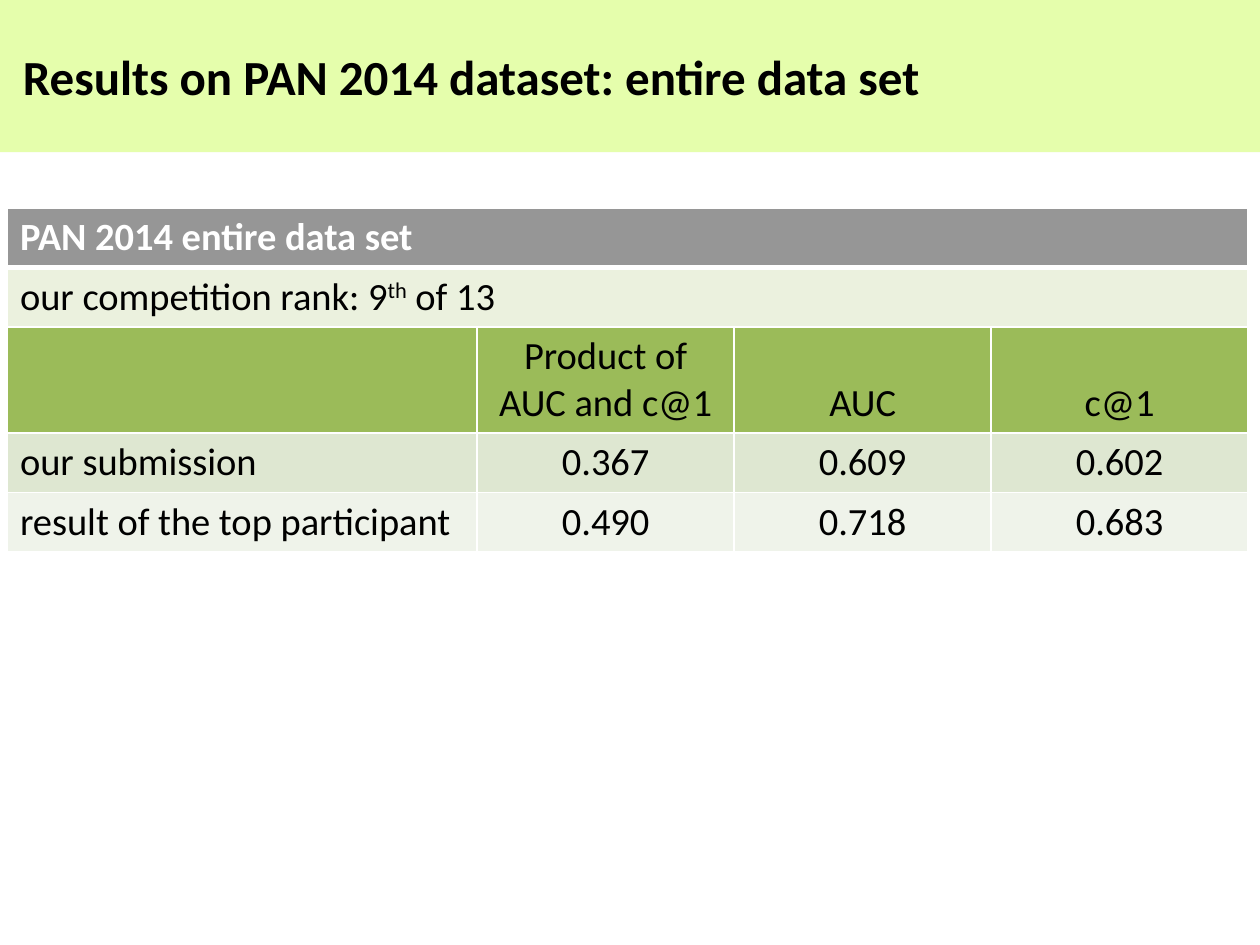
from lxml import etree
from pptx import Presentation
from pptx import util as u
from pptx.dml import color
from pptx.enum import shapes, text
from pptx.oxml import ns

THEME = {
    "font": "Calibri",
    "title_size": 28,
    "table_size": 22,
    "text": "000000",
    "white": "FFFFFF",
    "band": "E5FEAC",
    "rows": ["969696", "EBF1DE", "9BBB59", "DEE7D1", "EFF3EA"],
}
ROWS = [
    ["PAN 2014 entire data set"],
    ["our competition rank: 9^th^ of 13"],
    ["", "Product of\nAUC and c@1", "AUC", "c@1"],
    ["our submission", "0.367", "0.609", "0.602"],
    ["result of the top participant", "0.490", "0.718", "0.683"],
]
COL_WIDTHS = [9.47, 5.18, 5.18, 5.18]
ROW_HEIGHTS = [1.18, 1.18, 2.12, 1.18, 1.18]


def format_run(r, size, rgb, bold):
    values = {"name": THEME["font"], "size": u.Pt(size), "bold": bold}
    for name, value in values.items():
        setattr(r.font, name, value)
    r.font.color.rgb = color.RGBColor.from_string(rgb)


def add_borders(cell, widths):
    tc_pr = cell._tc.get_or_add_tcPr()
    for i, (side, width) in enumerate(widths.items()):
        ln = etree.Element(ns.qn(f"a:ln{side}"), w=str(u.Pt(width)))
        fill = etree.SubElement(ln, ns.qn("a:solidFill"))
        etree.SubElement(fill, ns.qn("a:srgbClr"), val=THEME["white"])
        tc_pr.insert(i, ln)


prs = Presentation()
prs.slide_width, prs.slide_height = u.Cm(25.4), u.Cm(19.05)
s = prs.slides.add_slide(prs.slide_layouts[5])

frame = s.shapes.add_table(
    len(ROWS), len(COL_WIDTHS), u.Cm(0.15), u.Cm(4.19),
    u.Cm(sum(COL_WIDTHS)), u.Cm(sum(ROW_HEIGHTS)))
table = frame.table
table.horz_banding = False
for col, width in zip(table.columns, COL_WIDTHS):
    col.width = u.Cm(width)
for row, height in zip(table.rows, ROW_HEIGHTS):
    row.height = u.Cm(height)

for i, values in enumerate(ROWS):
    heading = i == 0
    for j in range(len(COL_WIDTHS)):
        cell = table.cell(i, j)
        cell.fill.solid()
        cell.fill.fore_color.rgb = color.RGBColor.from_string(THEME["rows"][i])
        add_borders(cell, {"L": 1, "R": 1, "T": 3 if i == 1 else 1, "B": 3 if heading else 1})
    if len(values) == 1:
        table.cell(i, 0).merge(table.cell(i, len(COL_WIDTHS) - 1))
    for j, value in enumerate(values):
        cell = table.cell(i, j)
        cell.vertical_anchor = text.MSO_ANCHOR.BOTTOM if i == 2 else text.MSO_ANCHOR.TOP
        tf = cell.text_frame
        for k, line in enumerate(value.split("\n")):
            p = tf.add_paragraph() if k else tf.paragraphs[0]
            p.alignment = text.PP_ALIGN.CENTER if j else text.PP_ALIGN.LEFT
            p.font.size = u.Pt(THEME["table_size"])
            for n, part in enumerate(line.split("^") if line else []):
                r = p.add_run()
                r.text = part
                format_run(r, THEME["table_size"], THEME["white" if heading else "text"], heading)
                if n % 2:
                    r._r.get_or_add_rPr().set("baseline", "30000")

band = s.shapes.add_shape(shapes.MSO_SHAPE.RECTANGLE, 0, 0, prs.slide_width, u.Cm(3.07))
band.shadow.inherit = False
band.fill.solid()
band.fill.fore_color.rgb = color.RGBColor.from_string(THEME["band"])
band.line.fill.background()

title = s.shapes.title
title.element.getparent().append(title.element)
box = {"left": u.Cm(0), "top": u.Cm(0.81), "width": prs.slide_width, "height": u.Cm(1.45)}
for name, value in box.items():
    setattr(title, name, value)
tf = title.text_frame
frame_format = {
    "margin_left": u.Cm(0.46),
    "word_wrap": True,
    "auto_size": text.MSO_AUTO_SIZE.NONE,
    "vertical_anchor": text.MSO_ANCHOR.MIDDLE,
}
for name, value in frame_format.items():
    setattr(tf, name, value)
p = tf.paragraphs[0]
p.alignment = text.PP_ALIGN.LEFT
r = p.add_run()
r.text = "Results on PAN 2014 dataset: entire data set"
format_run(r, THEME["title_size"], THEME["text"], True)

prs.save("out.pptx")
